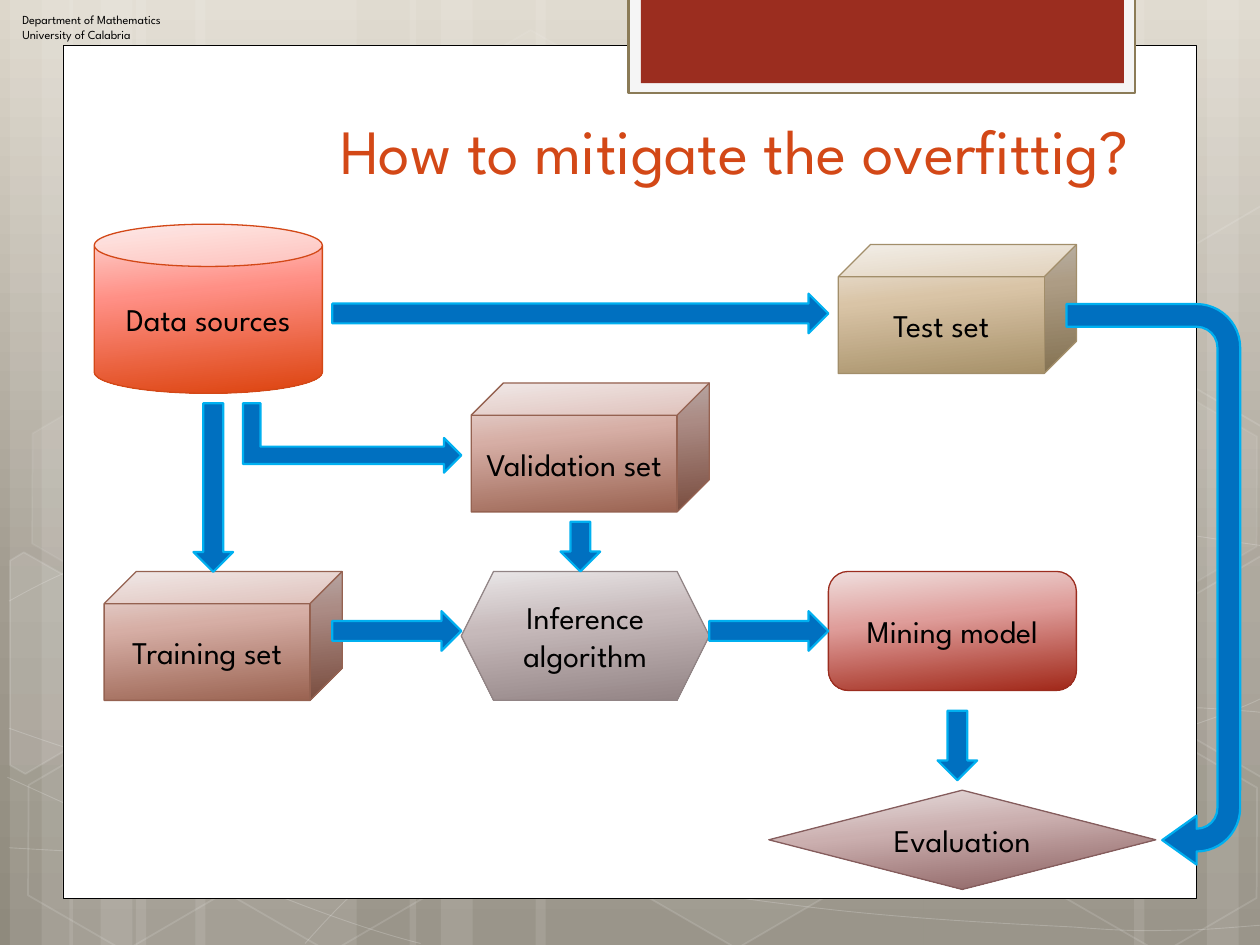
import copy
import math

import pptx
import pptx.util
import pptx.oxml.ns
from lxml import etree
from pptx.dml.color import RGBColor
from pptx.enum.shapes import MSO_SHAPE
from pptx.enum.text import MSO_ANCHOR, MSO_AUTO_SIZE, PP_ALIGN
from pptx.util import Cm

FONT = "League Spartan"
WHITE = RGBColor(0xFF, 0xFF, 0xFF)
BLACK = RGBColor(0x00, 0x00, 0x00)
ORANGE = RGBColor(0xD3, 0x48, 0x17)
BRICK = RGBColor(0x9B, 0x2D, 0x1F)
PALE = RGBColor(0xF5, 0xF5, 0xF5)
OLIVE = RGBColor(0x8B, 0x7B, 0x57)
ARROW_BLUE = RGBColor(0x00, 0x70, 0xC0)
ARROW_EDGE = RGBColor(0x00, 0xB0, 0xF0)


def palette(*codes):
    return [RGBColor.from_string(code) for code in codes]


# Gradients: three stops, then the outline where there is one
BACKDROP = palette("DDD7CB", "A29C90", "8F8A7D")
RED = palette("FDDBD8", "FF8F85", "DC430E", "D34817")
SAND = palette("EFEAE3", "D9C4A6", "A58F67", "A28E6A")
CLAY = palette("EDE3E1", "D6AEA5", "98604E", "956251")
GREY = palette("EAE7E8", "C6B9BA", "928384", "918485")
CRIMSON = palette("EFDFDE", "DF9D9A", "A12819", "9B2D1F")
MAUVE = palette("EAE3E3", "CBAFAF", "875B5B", "855D5D")

# Backdrop geometry in cm: left, width, rotation
BANDS = [(2.74, 4.45, 0), (0.2, 1.27, 0), (0.84, 2.11, 0), (3.94, 4.45, 0),
         (1.4, 1.27, 0), (2.03, 2.11, 0), (18.62, 4.45, 180), (24.33, 1.27, 180),
         (22.86, 2.11, 180), (10.8, 7.82, 0), (8.26, 1.27, 0), (8.89, 2.11, 0)]
# Each curve: a start, then two control points and an end per section
CURVES = [
    [(0.18, 17.09), (1.55, 17.17), (2.92, 17.25), (4.83, 17.22),
     (6.73, 17.2), (9.09, 17.15), (11.63, 16.89), (14.17, 16.64),
     (17.78, 16.15), (20.12, 15.67), (22.43, 15.19), (24.82, 14.43), (25.58, 14)],
    [(0.18, 12.12), (0.91, 11.71), (1.65, 11.33), (3.07, 10.95),
     (4.52, 10.57), (6.58, 10.01), (8.81, 9.83), (11.07, 9.65),
     (13.82, 9.63), (16.61, 9.83), (19.41, 10.03), (24.05, 10.82), (25.58, 11.02)],
    [(0.15, 15.67), (3.23, 17.07), (6.27, 18.47), (8.48, 19.02)],
    [(0.18, 14.68), (0.97, 14.96), (1.78, 15.24), (3.25, 15.65),
     (4.72, 16.03), (6.93, 16.66), (9.07, 17.09), (11.18, 17.53),
     (13.84, 17.98), (15.95, 18.24), (18.06, 18.52), (20.32, 18.62),
     (21.67, 18.69), (22.99, 18.8), (23.34, 18.75), (24, 18.75),
     (24.66, 18.72), (25.12, 18.67), (25.58, 18.64)],
    [(6.15, 19.02), (6.6, 18.52), (7.06, 18.01), (7.67, 17.55),
     (8.28, 17.09), (9.14, 16.59), (9.86, 16.23), (10.57, 15.88),
     (11, 15.72), (11.94, 15.47), (12.85, 15.22), (14.55, 14.86),
     (15.44, 14.68), (16.36, 14.5), (16.48, 14.5), (17.27, 14.45),
     (18.06, 14.38), (19.3, 14.3), (20.17, 14.27), (21.06, 14.25),
     (22.5, 14.27), (22.5, 14.27), (22.5, 14.27), (24.21, 14.27),
     (24.21, 14.27), (24.66, 14.3), (25.1, 14.33), (25.32, 14.35),
     (25.55, 14.38), (25.48, 14.35), (25.55, 14.38)],
]
# Left, top, fill opacity, line opacity (percent)
HEXAGONS = [(8.48, 0.91, 4, 8), (12.62, 14.96, 6, 12), (0.28, 15.01, 0, 12),
            (0.36, 7.92, 7, 8), (4.42, 15.04, 0, 12), (19.13, 11.51, 10, 12),
            (21.18, 15.06, 0, 12), (21.18, 7.98, 7, 8)]
# Hexagons cut by the slide edge: fill opacity, centre, corners as they show
CUT_HEXAGONS = [
    (10, (0.91, 13.59), [(0.2, 11.3), (0.48, 11.13), (2.44, 12.24), (2.41, 14.48),
                         (0.51, 15.6), (0.2, 15.42)]),
    (4, (25.02, 13.21), [(23.52, 12.32), (25.43, 11.2), (25.63, 11.33), (25.63, 15.57),
                         (25.45, 15.67), (23.52, 14.55)]),
    (0, (25.02, 6.12), [(23.52, 5.26), (25.43, 4.14), (25.65, 4.27), (25.63, 8.51),
                        (25.45, 8.61), (23.52, 7.49)]),
]


def set_alpha(sp, xpath, percent):
    for clr in sp._element.spPr.xpath(xpath):
        etree.SubElement(clr, pptx.oxml.ns.qn("a:alpha")).set("val", str(percent * 1000))


def style(sp, fill=None, line=None, width=1, fill_alpha=100, line_alpha=100):
    sp.shadow.inherit = False
    if fill is None or fill_alpha == 0:
        sp.fill.background()
    else:
        sp.fill.solid()
        sp.fill.fore_color.rgb = fill
    if line is None:
        sp.line.fill.background()
    else:
        sp.line.color.rgb = line
        sp.line.width = pptx.util.Pt(width)
    if fill_alpha < 100:
        set_alpha(sp, "a:solidFill/a:srgbClr", fill_alpha)
    if line_alpha < 100:
        set_alpha(sp, "a:ln/a:solidFill/a:srgbClr", line_alpha)


def set_gradient(fill, element, colors, middle, angle):
    fill.gradient()
    fill.gradient_angle = 360 - angle
    stops = next(element.iter(pptx.oxml.ns.qn("a:gsLst")))
    stops.append(copy.deepcopy(stops[-1]))
    for stop, color, position in zip(fill.gradient_stops, colors, (0, middle, 1)):
        stop.color.rgb = color
        stop.position = position


def add_shape(slide, kind, x, y, w, h, rotation=0):
    sp = slide.shapes.add_shape(kind, Cm(x), Cm(y), Cm(w), Cm(h))
    sp.rotation = rotation
    return sp


def add_outline(slide, points, close):
    pts = [(Cm(x), Cm(y)) for x, y in points]
    builder = slide.shapes.build_freeform(*pts[0])
    builder.add_line_segments(pts[1:], close=close)
    return builder.convert_to_shape()


def add_curve(slide, nodes):
    sp = add_outline(slide, nodes, False)
    # Join every three segments into one cubic section
    lines = sp._element.spPr.xpath(".//a:lnTo")
    for i in range(0, len(lines), 3):
        cubic = etree.Element(pptx.oxml.ns.qn("a:cubicBezTo"))
        lines[i].addprevious(cubic)
        for line in lines[i:i + 3]:
            cubic.append(line[0])
            line.getparent().remove(line)
    return sp


def turn(point, centre, degrees):
    cos, sin = math.cos(math.radians(degrees)), math.sin(math.radians(degrees))
    dx, dy = point[0] - centre[0], point[1] - centre[1]
    return centre[0] + dx * cos - dy * sin, centre[1] + dx * sin + dy * cos


def format_text(tf, size, color, align):
    for p in tf.paragraphs:
        p.alignment = align
        for r in p.runs:
            r.font.name, r.font.size = FONT, pptx.util.Pt(size)
            r.font.color.rgb = color


def add_node(slide, text, kind, x, y, w, h, colors):
    sp = add_shape(slide, kind, x, y, w, h)
    style(sp, line=colors[3], width=0.75)
    set_gradient(sp.fill, sp._element, colors, 0.4, 84)
    tf = sp.text_frame
    tf.text = text
    tf.word_wrap = True
    tf.vertical_anchor = MSO_ANCHOR.MIDDLE
    format_text(tf, 18, BLACK, PP_ALIGN.CENTER)


def add_arrow(slide, kind, x, y, w, h, rotation=0, adjustments=()):
    sp = add_shape(slide, kind, x, y, w, h, rotation)
    for i, value in enumerate(adjustments):
        sp.adjustments[i] = value
    style(sp, ARROW_BLUE, ARROW_EDGE, 1.25)


def add_backdrop(slide):
    set_gradient(slide.background.fill, slide._element, BACKDROP, 0.62, 90)
    for x, w, rotation in BANDS:
        sp = add_shape(slide, MSO_SHAPE.RECTANGLE, x, 0, w, 19.05, rotation)
        style(sp, WHITE, fill_alpha=10)
    for nodes in CURVES:
        style(add_curve(slide, nodes), line=WHITE, width=0.5, line_alpha=20)
    for x, y, fill_alpha, line_alpha in HEXAGONS:
        sp = add_shape(slide, MSO_SHAPE.HEXAGON, x, y, 4.45, 3.86, 30)
        sp.adjustments[0] = 0.285
        style(sp, WHITE, WHITE, 1, fill_alpha, line_alpha)
    for fill_alpha, centre, corners in CUT_HEXAGONS:
        sp = add_outline(slide, [turn(corner, centre, -30) for corner in corners], True)
        sp.rotation = 30
        style(sp, WHITE, WHITE, 1, fill_alpha, 12)
    # White panel and the tab on its top edge
    style(add_shape(slide, MSO_SHAPE.RECTANGLE, 1.27, 0.91, 22.86, 17.2), WHITE, BLACK, 0.5)
    style(add_shape(slide, MSO_SHAPE.RECTANGLE, 12.67, -0.05, 10.21, 1.93), PALE, OLIVE, 1.25)
    style(add_shape(slide, MSO_SHAPE.RECTANGLE, 12.92, -0.05, 9.74, 1.73), BRICK)


def add_header(slide):
    tf = slide.shapes.add_textbox(Cm(0.2), Cm(0.13), Cm(5.59), Cm(0.86)).text_frame
    tf.word_wrap = True
    tf.text = "Department of Mathematics\nUniversity of Calabria"
    format_text(tf, 7, BLACK, PP_ALIGN.LEFT)


def add_title(slide):
    sp = slide.shapes.title
    sp.left, sp.top, sp.width, sp.height = Cm(3.5), Cm(2.13), Cm(19.51), Cm(3.18)
    tf = sp.text_frame
    tf.text = "How to mitigate the overfittig?"
    tf.auto_size = MSO_AUTO_SIZE.NONE
    tf.vertical_anchor = MSO_ANCHOR.TOP
    format_text(tf, 36, ORANGE, PP_ALIGN.RIGHT)
    # Bring the title in front of the backdrop
    slide.shapes._spTree.append(sp._element)


def main():
    prs = pptx.Presentation()
    prs.slide_width, prs.slide_height = Cm(25.4), Cm(19.05)
    slide = prs.slides.add_slide(prs.slide_layouts[5])
    add_backdrop(slide)
    add_header(slide)
    add_title(slide)

    # Data sets and processing steps
    add_node(slide, "Data sources", MSO_SHAPE.CAN, 1.9, 4.52, 4.6, 3.41, RED)
    for text, x, y, colors in (("Test set", 16.9, 4.93, SAND),
                               ("Training set", 2.1, 11.52, CLAY),
                               ("Validation set", 9.5, 7.72, CLAY)):
        add_node(slide, text, MSO_SHAPE.CUBE, x, y, 4.8, 2.6, colors)
    add_node(slide, "Inference algorithm", MSO_SHAPE.HEXAGON, 9.3, 11.52, 5, 2.6, GREY)
    add_node(slide, "Mining model", MSO_SHAPE.ROUNDED_RECTANGLE, 16.7, 11.52, 5, 2.4, CRIMSON)
    add_node(slide, "Evaluation", MSO_SHAPE.DIAMOND, 15.5, 15.93, 7.8, 2, MAUVE)

    # Flow arrows
    for x, y, length in ((6.7, 5.92, 10), (6.7, 12.32, 2.6), (14.3, 12.32, 2.4)):
        add_arrow(slide, MSO_SHAPE.RIGHT_ARROW, x, y, length, 0.8)
    for x, y, length in ((3.9, 8.13, 3.4), (18.9, 14.33, 1.4), (11.3, 10.52, 1)):
        add_arrow(slide, MSO_SHAPE.DOWN_ARROW, x, y, 0.8, length)
    add_arrow(slide, MSO_SHAPE.BENT_UP_ARROW, 6.4, 6.63, 1.4, 4.4, 90)
    add_arrow(slide, MSO_SHAPE.U_TURN_ARROW, 17.6, 10.03, 11.3, 3.5, 90,
              (0.131, 0.141, 0.198, 0.375, 0.449))
    prs.save("out.pptx")


if __name__ == "__main__":
    main()
